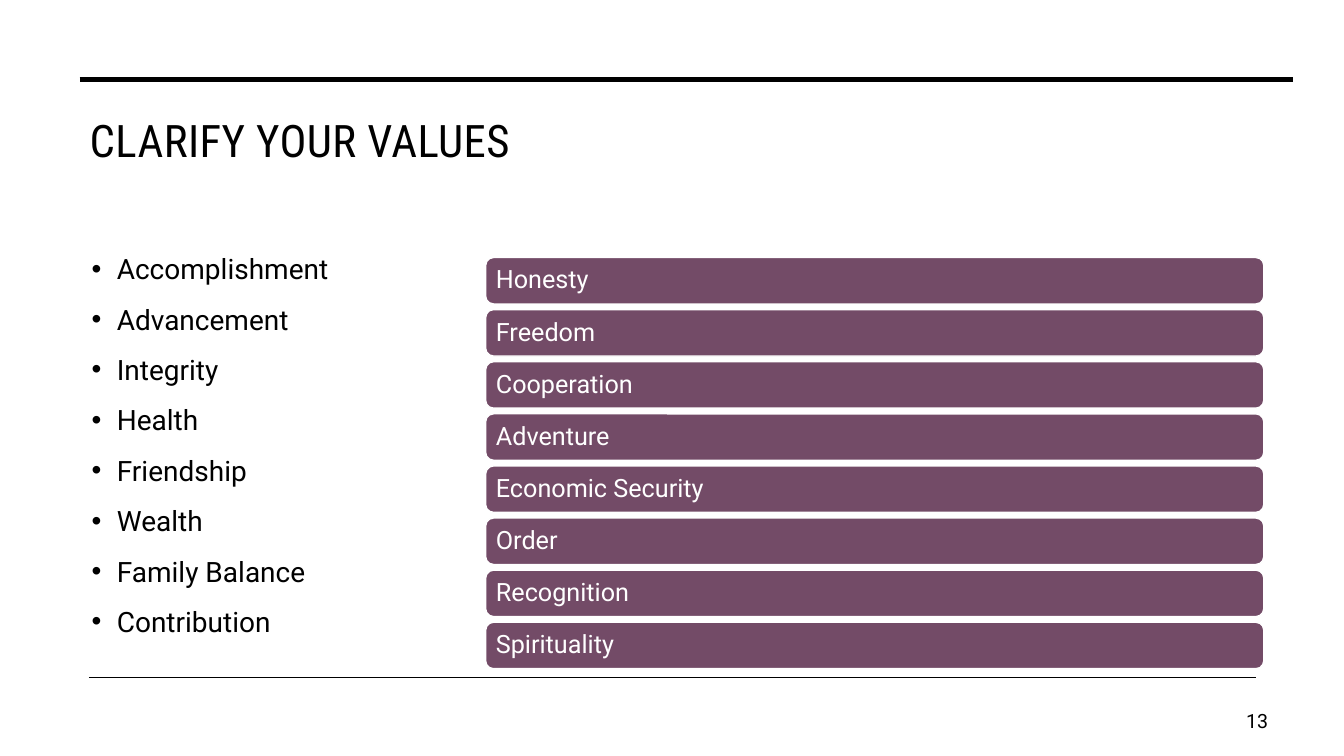
from lxml.etree import SubElement
from pptx import Presentation
from pptx.dml.color import RGBColor
from pptx.enum.shapes import MSO_CONNECTOR, MSO_SHAPE
from pptx.enum.text import MSO_ANCHOR, PP_ALIGN
from pptx.oxml.ns import qn
from pptx.util import Cm, Pt

# Content
TITLE = "CLARIFY YOUR VALUES"
LISTED_VALUES = ["Accomplishment", "Advancement", "Integrity", "Health",
                 "Friendship", "Wealth", "Family Balance", "Contribution"]
BAR_VALUES = ["Honesty", "Freedom", "Cooperation", "Adventure",
              "Economic Security", "Order", "Recognition", "Spirituality"]
PAGE_NUMBER = "13"

# Rules: left, right, height on the page (cm), width (pt)
RULES = [(2.01, 32.59, 2.01, 3.5), (2.24, 31.65, 17.07, 1)]

# Style
BLACK = RGBColor(0x00, 0x00, 0x00)
WHITE = RGBColor(0xFF, 0xFF, 0xFF)
PLUM = RGBColor(0x73, 0x4B, 0x67)
BODY_FONT = "Roboto"
TITLE_FONT = "Roboto Condensed"

# Bar column (cm)
BAR_LEFT, BAR_TOP, BAR_WIDTH, BAR_HEIGHT = 12.24, 6.49, 19.61, 1.17
BAR_PITCH = 1.313


def style_text(frame, size, color, font=BODY_FONT):
    for para in frame.paragraphs:
        for span in para.runs:
            span.font.size = Pt(size)
            span.font.name = font
            span.font.color.rgb = color


def add_text(page, text, place, size, font=BODY_FONT):
    box = page.shapes.add_textbox(*[Cm(length) for length in place])
    frame = box.text_frame
    frame.word_wrap = True
    frame.text = text
    style_text(frame, size, BLACK, font)
    return frame


def add_rule(page, left, right, height, width):
    rule = page.shapes.add_connector(
        MSO_CONNECTOR.STRAIGHT, Cm(left), Cm(height), Cm(right), Cm(height))
    rule.line.color.rgb = BLACK
    rule.line.width = Pt(width)
    SubElement(rule.element.spPr, qn("a:effectLst"))


def add_bullet(para):
    properties = para._p.get_or_add_pPr()
    properties.set("marL", str(Cm(0.635)))
    properties.set("indent", str(-Cm(0.635)))
    SubElement(properties, qn("a:buFont")).set("typeface", "Arial")
    SubElement(properties, qn("a:buChar")).set("char", "•")


def add_bar(page, text, top):
    bar = page.shapes.add_shape(
        MSO_SHAPE.ROUNDED_RECTANGLE,
        Cm(BAR_LEFT), Cm(top), Cm(BAR_WIDTH), Cm(BAR_HEIGHT))
    bar.adjustments[0] = 0.17
    bar.shadow.inherit = False
    bar.fill.solid()
    bar.fill.fore_color.rgb = PLUM
    bar.line.color.rgb = WHITE
    bar.line.width = Pt(1)
    frame = bar.text_frame
    frame.margin_left = frame.margin_right = Cm(0.2)
    frame.margin_top = frame.margin_bottom = Cm(0.1)
    frame.vertical_anchor = MSO_ANCHOR.MIDDLE
    frame.text = text
    frame.paragraphs[0].alignment = PP_ALIGN.LEFT
    frame.paragraphs[0].line_spacing = 0.9
    style_text(frame, 18, WHITE)


def main():
    deck = Presentation()
    deck.slide_width, deck.slide_height = Cm(33.87), Cm(19.05)
    page = deck.slides.add_slide(deck.slide_layouts[6])

    for rule in RULES:
        add_rule(page, *rule)

    # Title
    title = add_text(page, TITLE, (2.01, 2.72, 30.66, 3.33), 32, TITLE_FONT)
    title.paragraphs[0].runs[0].font._element.set("spc", "30")

    # Bulleted list
    values = add_text(page, "\n".join(LISTED_VALUES),
                      (2.06, 6.22, 8.2, 10.85), 20)
    for para in values.paragraphs:
        para.space_after = Pt(12)
        add_bullet(para)

    # Bars
    for index, value in enumerate(BAR_VALUES):
        add_bar(page, value, BAR_TOP + index * BAR_PITCH)

    # Page number
    number = add_text(page, PAGE_NUMBER, (30.33, 17.65, 1.88, 1.02), 14)
    number.vertical_anchor = MSO_ANCHOR.MIDDLE
    number.paragraphs[0].alignment = PP_ALIGN.RIGHT

    deck.save("out.pptx")


if __name__ == "__main__":
    main()
